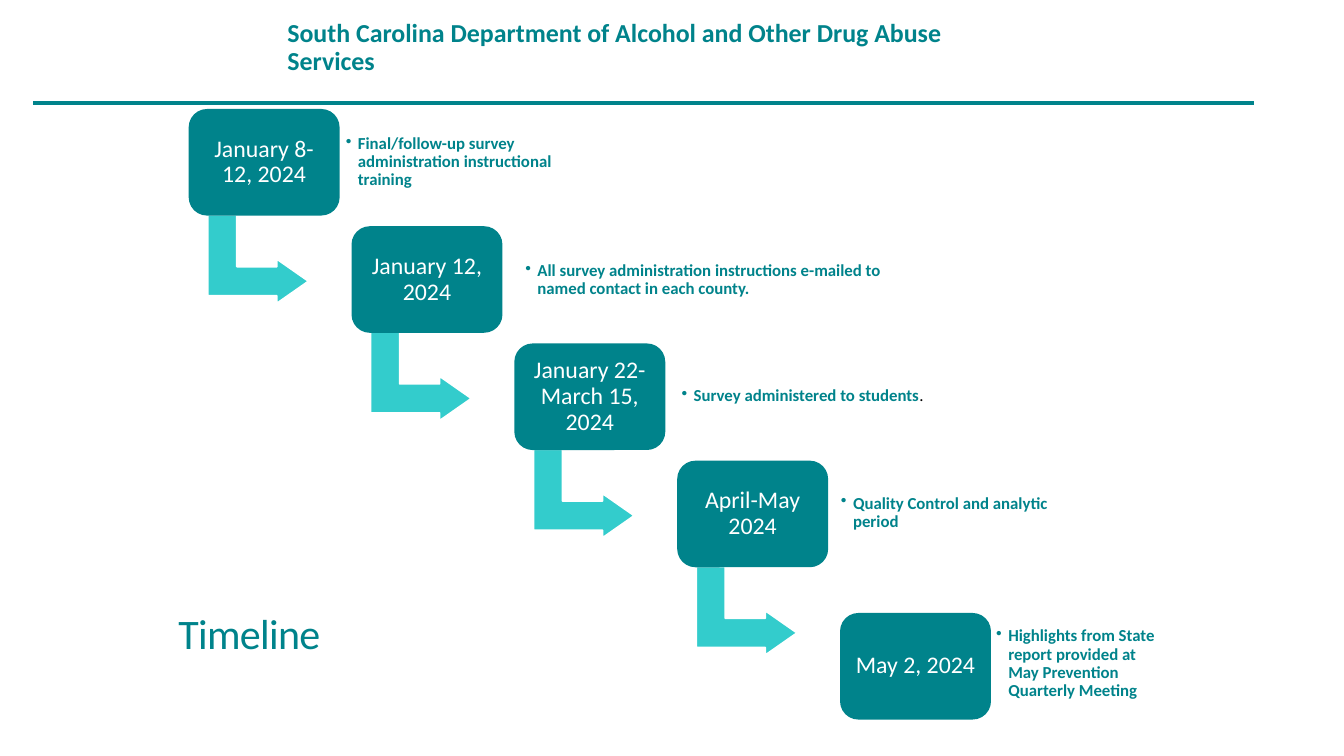
import pptx
import pptx.util
import pptx.dml.color
import pptx.enum.shapes
import pptx.enum.text
import pptx.oxml.ns
from lxml import etree

Inches, Pt = pptx.util.Inches, pptx.util.Pt
SHAPES = pptx.enum.shapes.MSO_SHAPE
ANCHOR = pptx.enum.text.MSO_ANCHOR
ALIGN = pptx.enum.text.PP_ALIGN

COLORS = {"teal": "00838B", "aqua": "33CCCC", "white": "FFFFFF", "black": "000000"}
FONT = "Calibri"
AGENCY = "South Carolina Department of Alcohol and Other Drug Abuse Services"
HEADING = "Timeline"

# date, note, note box (left, top, width, height)
STEPS = [
    ("January 8-12, 2024", "Final/follow-up survey administration instructional training",
     (3.38, 1.18, 2.69, 0.86)),
    ("January 12, 2024",
     "All survey administration instructions e-mailed to named contact in each county.",
     (5.16, 2.36, 3.68, 0.84)),
    ("January 22-March 15, 2024", "Survey administered to students",
     (6.71, 3.51, 2.78, 0.84)),
    ("April-May 2024", "Quality Control and analytic period", (8.29, 4.67, 2.32, 0.84)),
    ("May 2, 2024", "Highlights from State report provided at May Prevention Quarterly Meeting",
     (9.83, 5.72, 1.71, 1.73)),
]
PLAIN_ENDING = {2: "."}  # closing text of a note, neither bold nor teal

CARD_LEFT, CARD_TOP, CARD_W, CARD_H = 1.88, 1.09, 1.48, 1.04
STEP_X, STEP_Y = 1.615, 1.163
LAST_CARD_TOP = 6.09
ARROW_DX, ARROW_DY, ARROW_W, ARROW_H = 0.24, 0.98, 0.88, 1


def rgb(name):
    return pptx.dml.color.RGBColor.from_string(COLORS[name])


def style(font, size, color, bold=False):
    font.name, font.size, font.bold = FONT, Pt(size), bold
    font.color.rgb = rgb(color)


def set_frame(frame, inset_x, inset_y, anchor=ANCHOR.MIDDLE):
    frame.word_wrap = True
    frame.auto_size = pptx.enum.text.MSO_AUTO_SIZE.NONE
    frame.vertical_anchor = anchor
    frame.margin_left = frame.margin_right = Inches(inset_x)
    frame.margin_top = frame.margin_bottom = Inches(inset_y)


def add_filled(slide, kind, box, fill, line):
    shape = slide.shapes.add_shape(kind, *map(Inches, box))
    shape.shadow.inherit = False
    shape.fill.solid()
    shape.fill.fore_color.rgb = rgb(fill)
    shape.line.color.rgb = rgb(line)
    shape.line.width = Pt(1.25)
    return shape


def add_arrow(slide, left, top):
    arrow = add_filled(slide, SHAPES.BENT_UP_ARROW, (left, top, ARROW_W, ARROW_H),
                       "aqua", "white")
    arrow.rotation = 90
    for index, value in enumerate((0.328, 0.25, 0.358)):
        arrow.adjustments[index] = value


def add_card(slide, left, top, date):
    card = add_filled(slide, SHAPES.ROUNDED_RECTANGLE, (left, top, CARD_W, CARD_H),
                      "teal", "teal")
    set_frame(card.text_frame, 0.07, 0.07)
    card.text_frame.text = date
    paragraph = card.text_frame.paragraphs[0]
    paragraph.alignment = ALIGN.CENTER
    paragraph.line_spacing = 0.9
    style(paragraph.runs[0].font, 17, "white")


def add_note(slide, box, note, ending):
    frame = slide.shapes.add_textbox(*map(Inches, box)).text_frame
    set_frame(frame, 0.05, 0.05)
    frame.text = note
    paragraph = frame.paragraphs[0]
    paragraph.line_spacing = 0.9
    properties = paragraph._p.get_or_add_pPr()
    properties.set("marL", str(Inches(0.12)))
    properties.set("indent", str(Inches(-0.12)))
    bullet = etree.SubElement(properties, pptx.oxml.ns.qn("a:buChar"))
    bullet.set("char", "•")
    style(paragraph.runs[0].font, 12, "teal", True)
    if ending:
        run = paragraph.add_run()
        run.text = ending
        style(run.font, 12, "black")


def add_heading(slide):
    title = slide.shapes.title
    title.left, title.top, title.width, title.height = map(Inches, (1.67, 6.05, 8.62, 1.45))
    set_frame(title.text_frame, 0.1, 0.05, ANCHOR.TOP)
    title.text_frame.text = HEADING
    paragraph = title.text_frame.paragraphs[0]
    paragraph.alignment = ALIGN.LEFT
    paragraph.line_spacing = 0.85
    style(paragraph.runs[0].font, 30, "teal")
    paragraph.runs[0].font._element.set("spc", "-50")


def add_agency(slide):
    frame = slide.shapes.add_textbox(*map(Inches, (2.78, 0.16, 7.21, 0.63))).text_frame
    set_frame(frame, 0.07, 0.04)
    frame.text = AGENCY
    frame.paragraphs[0].line_spacing = 0.9
    style(frame.paragraphs[0].runs[0].font, 18.5, "teal", True)


def add_rule(slide):
    rule = slide.shapes.add_connector(pptx.enum.shapes.MSO_CONNECTOR.STRAIGHT,
                                      *map(Inches, (0.33, 1.02, 12.44, 1.02)))
    rule.line.color.rgb = rgb("teal")
    rule.line.width = Pt(2.75)
    etree.SubElement(rule._element.spPr, pptx.oxml.ns.qn("a:effectLst"))


def main():
    deck = pptx.Presentation()
    deck.slide_width, deck.slide_height = Inches(13.33), Inches(7.5)
    slide = deck.slides.add_slide(deck.slide_layouts[5])
    add_heading(slide)
    last = len(STEPS) - 1
    for index, (date, note, note_box) in enumerate(STEPS):
        left = CARD_LEFT + index * STEP_X
        top = LAST_CARD_TOP if index == last else CARD_TOP + index * STEP_Y
        if index < last:
            add_arrow(slide, left + ARROW_DX, top + ARROW_DY)
        add_card(slide, left, top, date)
        add_note(slide, note_box, note, PLAIN_ENDING.get(index))
    add_agency(slide)
    add_rule(slide)
    deck.save("out.pptx")


if __name__ == "__main__":
    main()
